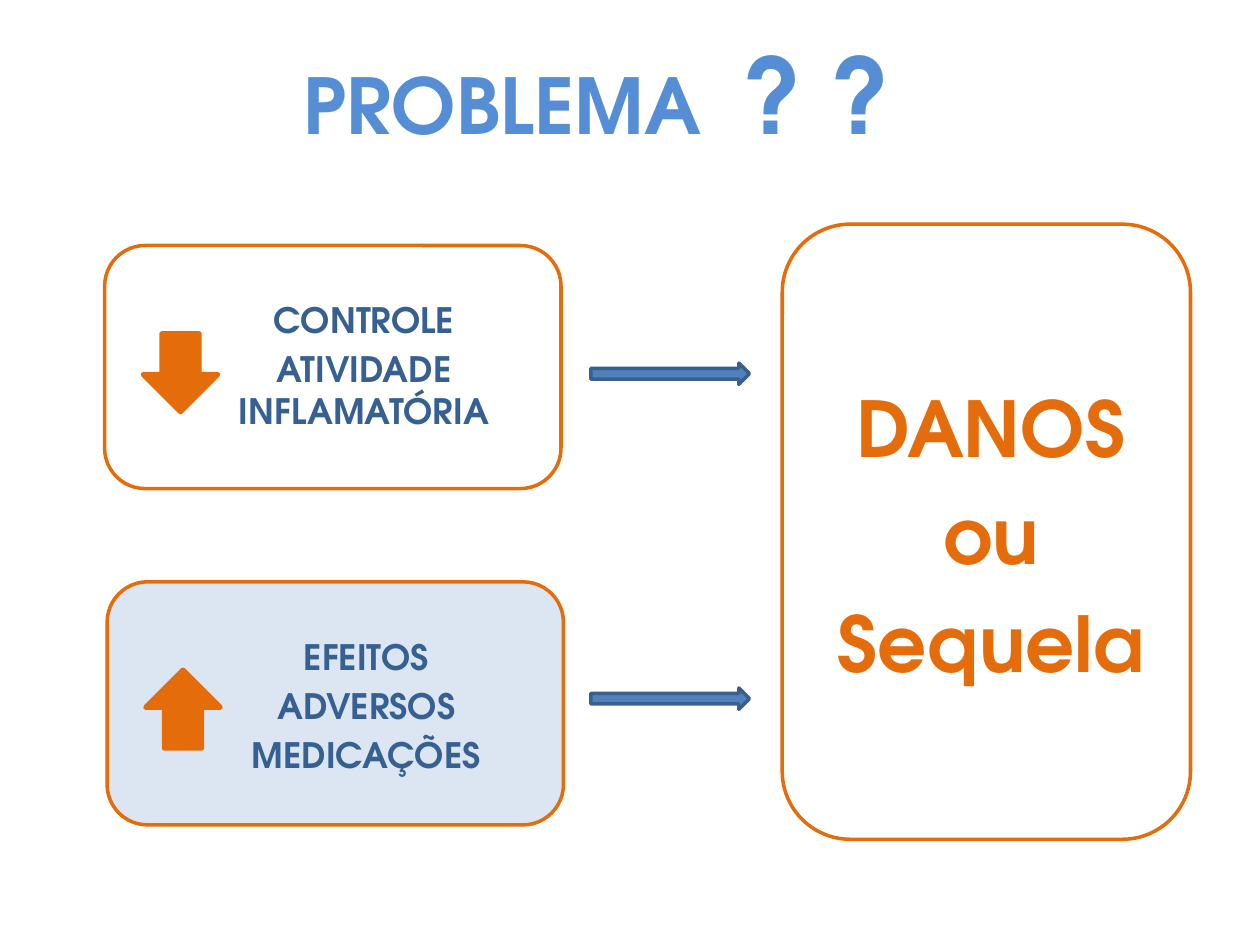
from pptx import Presentation
from pptx.dml.color import RGBColor
from pptx.enum.shapes import MSO_SHAPE
from pptx.enum.text import PP_ALIGN
from pptx.util import Cm, Pt

FONT = "TeX Gyre Adventor"
ORANGE, WHITE, PALE_BLUE = "E46C0A", "FFFFFF", "DCE6F2"
TITLE_BLUE, TEXT_BLUE = "558ED5", "376092"
ARROW_BLUE, ARROW_EDGE = "4F81BD", "3A5F8C"


def color(value):
    return RGBColor.from_string(value)


def add_figure(page, kind, left, top, width, height, fill, line, weight=2):
    figure = page.shapes.add_shape(kind, Cm(left), Cm(top), Cm(width), Cm(height))
    figure.shadow.inherit = False
    if fill:
        figure.fill.solid()
        figure.fill.fore_color.rgb = color(fill)
    else:
        figure.fill.background()
    figure.line.color.rgb = color(line)
    figure.line.width = Pt(weight)


def add_text(page, lines, left, top, width, height, size, ink):
    box = page.shapes.add_textbox(Cm(left), Cm(top), Cm(width), Cm(height))
    frame = box.text_frame
    frame.word_wrap = True
    frame.margin_left = Cm(0.56)
    frame.text = "\n".join(lines)
    for para in frame.paragraphs:
        para.alignment = PP_ALIGN.CENTER
        para.space_before = Pt(size * 0.2)
        para.font.name = FONT
        para.font.size = Pt(size)
        para.font.bold = True
        para.font.color.rgb = color(ink)
    return frame


def add_title(page):
    para = add_text(page, ["PROBLEMA"], 0.69, 0.48, 22.4, 2.8, 44, TITLE_BLUE).paragraphs[0]
    gap = para.add_run()
    gap.text = " "
    # Widen the single space before the question marks
    gap._r.get_or_add_rPr().set("spc", "1200")
    marks = para.add_run()
    marks.text = "? ?"
    marks.font.size = Pt(60)


def add_cause(page, left, top, fill, trend, lines):
    """Rounded card with a trend arrow and its caption."""
    add_figure(page, MSO_SHAPE.ROUNDED_RECTANGLE, left, top, 9.2, 4.9, fill, ORANGE)
    add_text(page, lines, left + 0.6, top + 0.95, 8.94, 3.8, 20, TEXT_BLUE)
    add_figure(page, trend, left + 0.78, top + 1.78, 1.5, 1.57, ORANGE, ORANGE, 3)


def main():
    deck = Presentation()
    deck.slide_width, deck.slide_height = Cm(25.4), Cm(19.05)
    page = deck.slides.add_slide(deck.slide_layouts[6])

    add_title(page)

    # Causes
    add_cause(page, 2.11, 4.95, WHITE, MSO_SHAPE.DOWN_ARROW,
              ["CONTROLE", "ATIVIDADE INFLAMATÓRIA"])
    add_cause(page, 2.16, 11.73, PALE_BLUE, MSO_SHAPE.UP_ARROW,
              ["EFEITOS", "ADVERSOS", "MEDICAÇÕES"])

    # Arrows from causes to outcome
    for top in (7.32, 13.87):
        add_figure(page, MSO_SHAPE.RIGHT_ARROW, 11.91, top, 3.2, 0.43,
                   ARROW_BLUE, ARROW_EDGE)

    # Outcome
    add_figure(page, MSO_SHAPE.ROUNDED_RECTANGLE, 15.77, 4.52, 8.23, 12.4, None, ORANGE)
    add_text(page, ["DANOS", "ou", "Sequela"], 16.13, 7.54, 7.39, 6.5, 44, ORANGE)

    deck.save("out.pptx")


if __name__ == "__main__":
    main()
